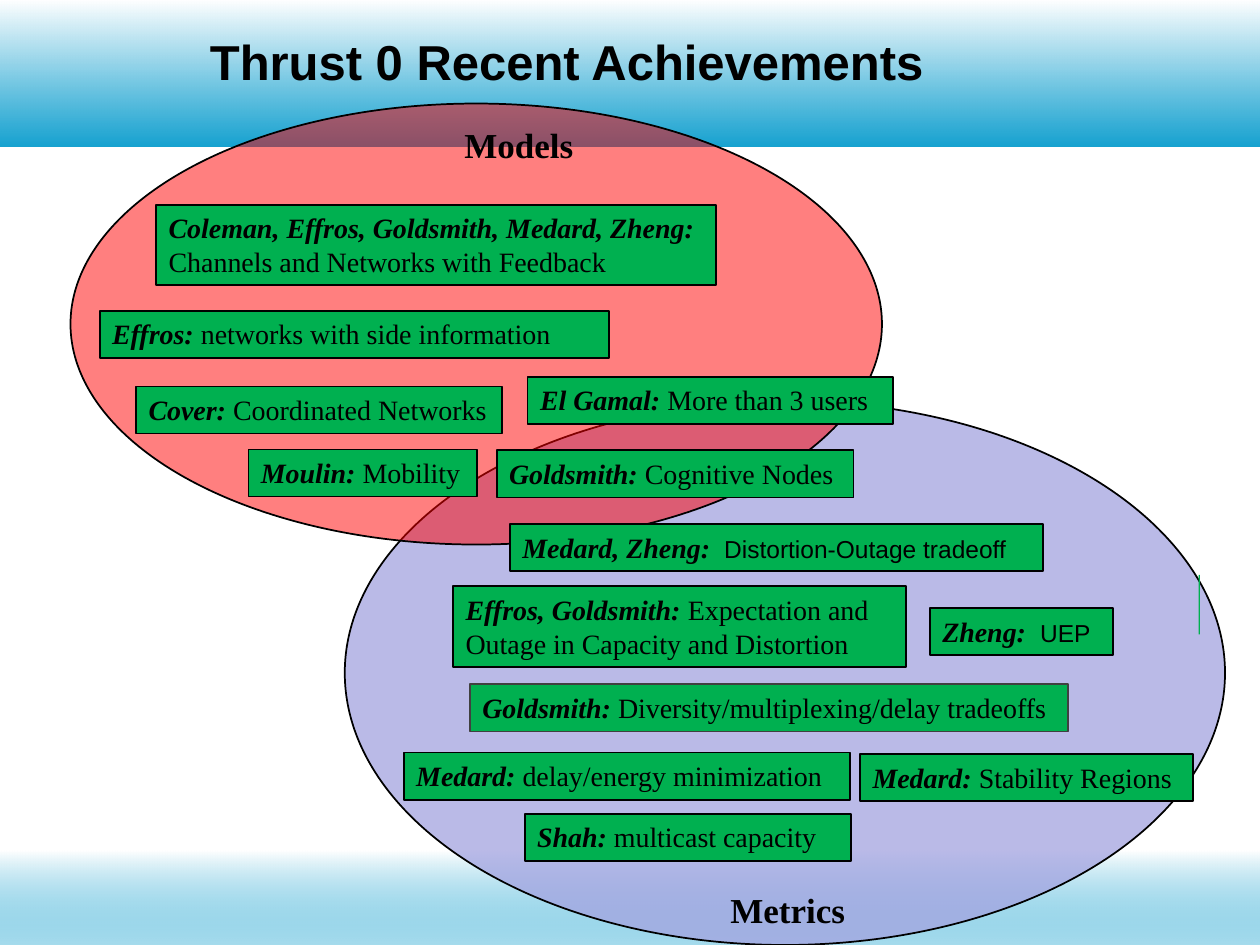
from dataclasses import dataclass

from lxml.etree import SubElement
from pptx import Presentation
from pptx.dml.color import RGBColor as RGB
from pptx.enum.shapes import MSO_SHAPE as SHAPE
from pptx.enum.text import MSO_ANCHOR as ANCHOR, MSO_AUTO_SIZE as AUTO, PP_ALIGN as ALIGN
from pptx.oxml.ns import qn
from pptx.util import Pt


@dataclass(frozen=True)
class Theme:
    serif: str = "Times New Roman"
    sans: str = "Arial"
    title: int = 28
    label: int = 20
    body: int = 16
    small: int = 14
    text: str = "000000"
    line: str = "000000"
    soft_line: str = "404040"
    white: str = "FFFFFF"
    band: str = "0099CC"
    box: str = "00B050"
    models: str = "FF0000"
    metrics: str = "A3A3E0"


THEME = Theme()


def set_alpha(color_parent, percent):
    """Make the RGB colour below an XML element partly transparent."""
    clr = next(color_parent.iter(qn("a:srgbClr")))
    SubElement(clr, qn("a:alpha")).set("val", str(percent * 1000))


def add_text(p, text, font=THEME.serif, size=THEME.body, color=THEME.text,
             bold=False, italic=False):
    r = p.add_run()
    r.text = text
    f = r.font
    f.name, f.size, f.bold, f.italic = font, Pt(size), bold, italic
    f.color.rgb = RGB.from_string(color)
    return r


class SlideBuilder:
    def __init__(self, slide, theme):
        self.slide, self.theme = slide, theme

    def shape(self, kind, at, fill=None, line=None, alpha=None):
        s = self.slide.shapes.add_shape(kind, *map(Pt, at))
        s.shadow.inherit = False
        if fill:
            s.fill.solid()
            s.fill.fore_color.rgb = RGB.from_string(fill)
        if alpha:
            set_alpha(s._element.spPr, alpha)
        if line:
            s.line.color.rgb = RGB.from_string(line)
            s.line.width = Pt(1)
        else:
            s.line.fill.background()
        return s

    def band(self, at, alpha):
        """Full-width strip fading from white down to the band colour."""
        s = self.shape(SHAPE.RECTANGLE, at)
        s.fill.gradient()
        s.fill.gradient_angle = 270
        top, bottom = s.fill.gradient_stops
        top.color.rgb = RGB.from_string(self.theme.white)
        bottom.color.rgb = RGB.from_string(self.theme.band)
        set_alpha(s._element.spPr.findall(".//" + qn("a:gs"))[-1], alpha)

    def set_ellipse(self, at, fill, alpha):
        self.shape(SHAPE.OVAL, at, fill, self.theme.line, alpha)

    def title(self, at, text):
        tf = self.slide.shapes.add_textbox(*map(Pt, at)).text_frame
        tf.word_wrap = True
        tf.vertical_anchor = ANCHOR.MIDDLE
        tf.margin_left = tf.margin_right = tf.margin_top = tf.margin_bottom = 0
        p = tf.paragraphs[0]
        p.line_spacing = 0.73
        add_text(p, text, font=self.theme.sans, size=self.theme.title, bold=True)

    def label(self, at, text):
        tf = self.slide.shapes.add_textbox(*map(Pt, at)).text_frame
        tf.word_wrap = False
        p = tf.paragraphs[0]
        p.alignment = ALIGN.CENTER
        add_text(p, text, size=self.theme.label, bold=True)

    def achievement(self, x, y, w, lines, line=THEME.line, **topic_format):
        """Green box; each line is a pair of people and topic."""
        h = 27 if len(lines) == 1 else 46
        s = self.shape(SHAPE.RECTANGLE, (x, y, w, h), self.theme.box, line)
        tf = s.text_frame
        tf.word_wrap = True
        tf.auto_size = AUTO.SHAPE_TO_FIT_TEXT
        tf.vertical_anchor = ANCHOR.TOP
        for i, (people, topic) in enumerate(lines):
            p = tf.add_paragraph() if i else tf.paragraphs[0]
            p.alignment = ALIGN.LEFT
            if people:
                add_text(p, people, bold=True, italic=True)
            if topic:
                add_text(p, topic, **topic_format)


def main():
    prs = Presentation()
    prs.slide_width, prs.slide_height = Pt(720), Pt(540)
    t = THEME
    b = SlideBuilder(prs.slides.add_slide(prs.slide_layouts[6]), t)

    b.band((0, 0, 720, 83.5), 91)
    b.band((0, 486, 720, 54), 34)
    b.set_ellipse((197, 229, 503, 311), t.metrics, 75)
    b.set_ellipse((40.3, 59.2, 463.7, 252), t.models, 50)
    b.title((120, 18, 629, 41), "Thrust 0 Recent Achievements")
    b.shape(SHAPE.RECTANGLE, (685, 328.5, 0.72, 34), t.box)
    b.label((363.6, 504, 173, 36), "Metrics")
    b.label((210, 67, 173, 58), "Models")

    sans = {"font": t.sans, "size": t.small}
    soft = {"line": t.soft_line}
    achievements = [
        (259, 335, 258.8, [("Effros, Goldsmith: ", "Expectation and"),
                           ("", "Outage in Capacity and Distortion")], {}),
        (268.5, 391, 342, [("Goldsmith: ", "Diversity/multiplexing/delay tradeoffs")], soft),
        (57, 177.6, 291, [("Effros:", " networks with side information")], {}),
        (299.8, 465, 186.5, [("Shah:", " multicast capacity")], {}),
        (142, 256.8, 130.5, [("Moulin: ", "Mobility")], {}),
        (230.8, 430, 255, [("Medard: ", "delay/energy minimization")], {}),
        (531.4, 347.5, 104.6, [("Zheng:  ", "UEP")], sans),
        (291.5, 299.5, 304.6, [("Medard, Zheng:  ", "Distortion-Outage tradeoff")], sans),
        (89.3, 117, 320, [("Coleman, Effros, Goldsmith, Medard, Zheng:", ""),
                          ("", "Channels and Networks with Feedback")], {}),
        (283.8, 257.3, 204, [("Goldsmith: ", "Cognitive Nodes")], {}),
        (77.8, 220.8, 209, [("Cover: ", "Coordinated Networks")], {}),
        (491.5, 430.8, 190.3, [("Medard: ", "Stability Regions")], {}),
        (301.5, 215.3, 209, [("El Gamal: ", "More than 3 users")], {}),
    ]
    for x, y, w, lines, style in achievements:
        b.achievement(x, y, w, lines, **style)

    prs.save("out.pptx")


if __name__ == "__main__":
    main()
